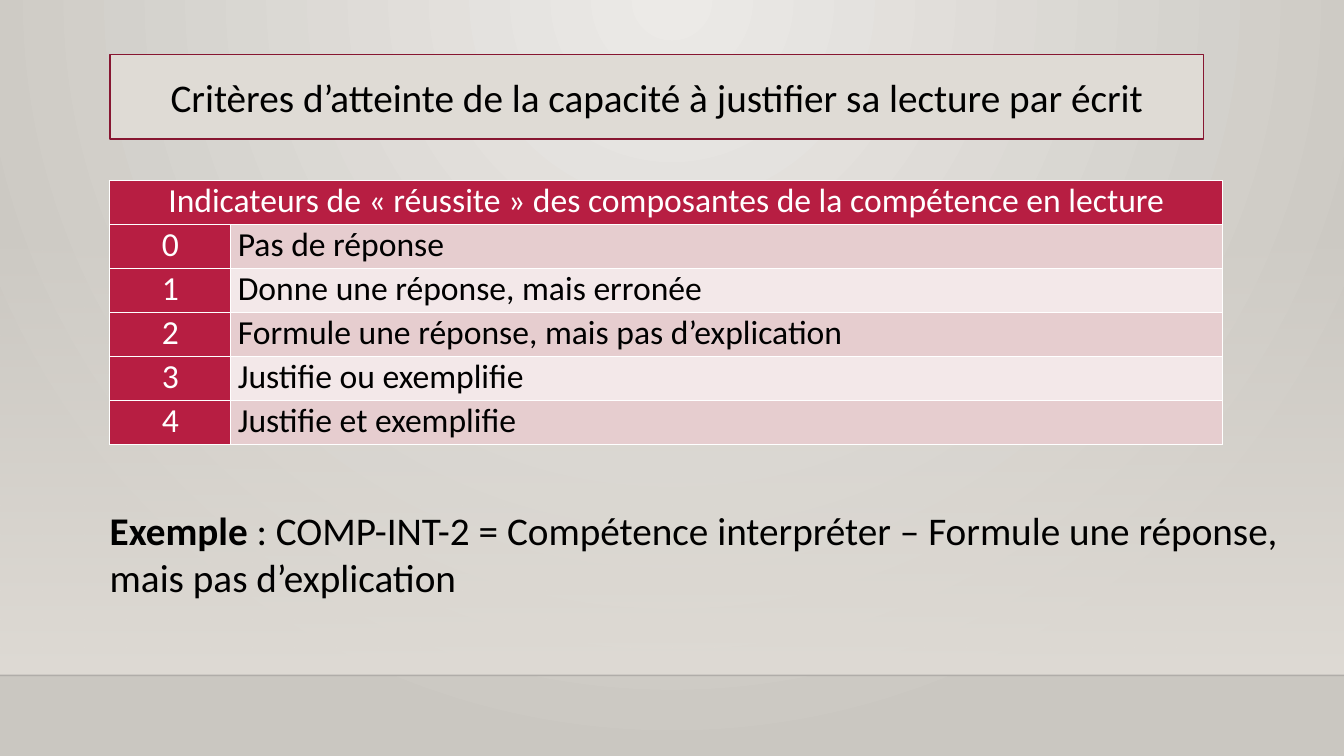
import pptx
import pptx.dml.color
import pptx.enum.shapes
import pptx.enum.text
import pptx.oxml
import pptx.oxml.ns
import pptx.util
from lxml import etree

Pt = pptx.util.Pt
ALIGN = pptx.enum.text.PP_ALIGN
MIDDLE = pptx.enum.text.MSO_ANCHOR.MIDDLE
qn = pptx.oxml.ns.qn

TITLE = "Critères d’atteinte de la capacité à justifier sa lecture par écrit"
HEADER = "Indicateurs de « réussite » des composantes de la compétence en lecture"
LEVELS = [
    "Pas de réponse",
    "Donne une réponse, mais erronée",
    "Formule une réponse, mais pas d’explication",
    "Justifie ou exemplifie",
    "Justifie et exemplifie",
]
EXAMPLE = [
    ("Exemple", True),
    (" : COMP-INT-2 = Compétence interpréter – Formule une réponse, mais pas d’explication", False),
]
FONT = "Calibri"
BLACK, WHITE, RED, DARK_RED, SAND = "000000", "FFFFFF", "B71E42", "871631", "DFDBD5"
BANDS = ["E6CDCF", "F3E8E9"]
WIDTH, HEIGHT = 960, 540
LEFT = 78.5
FLOOR = 482.4
COLUMNS = [86.4, 708.5]
ROW = 31.44


def colour(target, value):
    target.rgb = pptx.dml.color.RGBColor.from_string(value)


def solid(fill, value):
    fill.solid()
    colour(fill.fore_color, value)


def gradient(fill, values):
    fill.gradient()
    for stop, value, position in zip(fill.gradient_stops, values, (0, 1)):
        colour(stop.color, value)
        stop.position = position


def set_alpha(element, percent):
    etree.SubElement(element, qn("a:alpha"), val=str(percent * 1000))


def write(frame, runs, size, value, align):
    para = frame.paragraphs[0]
    para.alignment = align
    for text, bold in runs:
        span = para.add_run()
        span.text = text
        span.font.name = FONT
        span.font.size = Pt(size)
        span.font.bold = bold
        colour(span.font.color, value)


def fill_cell(cell, text, background, value, align):
    cell.margin_left = cell.margin_right = Pt(5)
    cell.margin_top = cell.margin_bottom = 0
    properties = cell._tc.get_or_add_tcPr()
    for side in ("lnL", "lnR", "lnT", "lnB"):
        border = etree.SubElement(properties, qn("a:" + side), w=str(Pt(1)))
        paint = etree.SubElement(border, qn("a:solidFill"))
        etree.SubElement(paint, qn("a:srgbClr"), val=WHITE)
    solid(cell.fill, background)
    write(cell.text_frame, [(text, False)], 24, value, align)


def add_background(page):
    gradient(page.background.fill, ["ECEAE7", "CAC7C1"])
    linear = page.background._cSld.find(".//" + qn("a:lin"))
    radial = etree.Element(qn("a:path"), path="circle")
    etree.SubElement(radial, qn("a:fillToRect"), l="43000", t="0", r="43000", b="100000")
    linear.getparent().replace(linear, radial)

    wall = page.shapes.add_shape(
        pptx.enum.shapes.MSO_SHAPE.RECTANGLE, 0, Pt(159), Pt(WIDTH), Pt(FLOOR - 159))
    wall.shadow.inherit = False
    wall.line.fill.background()
    gradient(wall.fill, [SAND, SAND])
    wall.fill.gradient_angle = 270
    set_alpha(wall._element.find(".//" + qn("a:srgbClr")), 0)

    edge = page.shapes.add_connector(
        pptx.enum.shapes.MSO_CONNECTOR.STRAIGHT, 0, Pt(FLOOR), Pt(WIDTH), Pt(FLOOR))
    edge.line.width = Pt(1)
    solid(edge.line.fill, "000001")
    set_alpha(edge._element.find(".//" + qn("a:srgbClr")), 20)
    etree.SubElement(edge._element.spPr, qn("a:effectLst"))


def add_title(page):
    title = page.shapes.add_shape(
        pptx.enum.shapes.MSO_SHAPE.RECTANGLE, Pt(LEFT), Pt(38.9), Pt(781.2), Pt(60.5))
    title.shadow.inherit = False
    solid(title.fill, SAND)
    solid(title.line.fill, DARK_RED)
    title.line.width = Pt(1.25)
    title.text_frame.word_wrap = True
    title.text_frame.vertical_anchor = MIDDLE
    write(title.text_frame, [(TITLE, False)], 28, BLACK, ALIGN.CENTER)


def add_levels(page):
    count = len(LEVELS) + 1
    table = page.shapes.add_table(
        count, 2, Pt(LEFT), Pt(128.9), Pt(sum(COLUMNS)), Pt(ROW * count)).table
    for column, width in zip(table.columns, COLUMNS):
        column.width = Pt(width)
    for row in table.rows:
        row.height = Pt(ROW)
    table.cell(0, 0).merge(table.cell(0, 1))
    fill_cell(table.cell(0, 0), HEADER, RED, WHITE, ALIGN.CENTER)
    for level, label in enumerate(LEVELS):
        fill_cell(table.cell(level + 1, 0), str(level), RED, WHITE, ALIGN.CENTER)
        fill_cell(table.cell(level + 1, 1), label, BANDS[level % 2], BLACK, ALIGN.JUSTIFY)


def add_example(page):
    box = page.shapes.add_textbox(Pt(71.3), Pt(357.3), Pt(851), Pt(75.6))
    box.text_frame.word_wrap = True
    box.text_frame.vertical_anchor = MIDDLE
    write(box.text_frame, EXAMPLE, 28, BLACK, ALIGN.LEFT)


def main():
    deck = pptx.Presentation()
    deck.slide_width, deck.slide_height = Pt(WIDTH), Pt(HEIGHT)
    page = deck.slides.add_slide(deck.slide_layouts[6])
    add_background(page)
    add_title(page)
    add_levels(page)
    add_example(page)
    deck.save("out.pptx")


if __name__ == "__main__":
    main()
